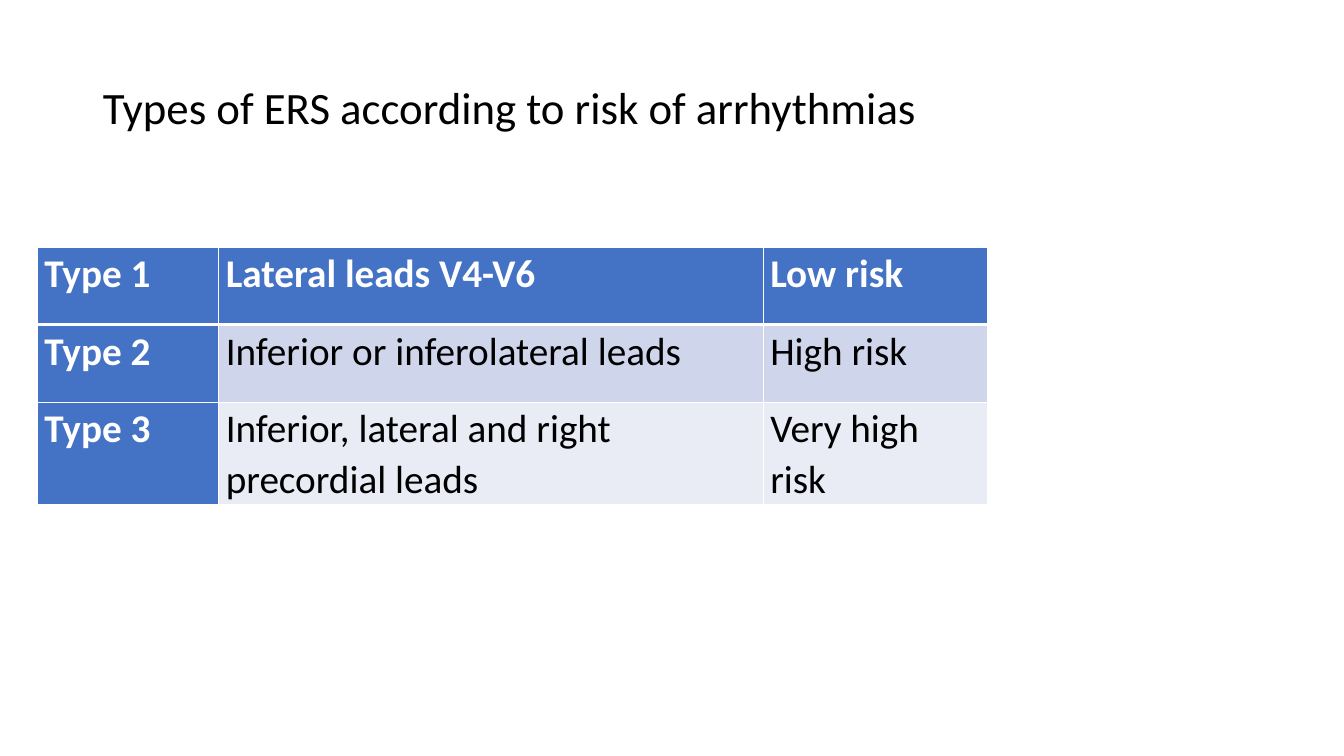
import pptx
import pptx.util
import pptx.dml.color
import pptx.enum.text
import pptx.oxml
import pptx.oxml.ns

THEME = {
    "font": "Calibri", "title_size": 32, "cell_size": 28,
    "text": "000000", "light": "FFFFFF", "accent": "4472C4",
    "bands": ["CFD5EA", "E9EBF5"],
}
Inches = pptx.util.Inches
Pt = pptx.util.Pt


def set_text(p, text, size, color, bold, spacing):
    r = p.add_run()
    r.text = text
    font = {"name": THEME["font"], "size": Pt(size), "bold": bold}
    for name, value in font.items():
        setattr(r.font, name, value)
    r.font.color.rgb = pptx.dml.color.RGBColor.from_string(color)
    p.line_spacing = spacing
    p.alignment = pptx.enum.text.PP_ALIGN.LEFT


def set_borders(cell, widths):
    tcPr = cell._tc.get_or_add_tcPr()
    for i, (side, width) in enumerate(widths.items()):
        ln = pptx.oxml.parse_xml(
            f'<a:{side} {pptx.oxml.ns.nsdecls("a")} w="{Pt(width)}"><a:solidFill>'
            f'<a:srgbClr val="{THEME["light"]}"/></a:solidFill></a:{side}>')
        tcPr.insert(i, ln)


prs = pptx.Presentation()
prs.slide_width = Inches(13.33)
prs.slide_height = Inches(7.5)
s = prs.slides.add_slide(prs.slide_layouts[5])

title = s.shapes.title
box = {"left": 0.92, "top": 0.37, "width": 11.5, "height": 1.45}
for name, value in box.items():
    setattr(title, name, Inches(value))
tf = title.text_frame
tf.vertical_anchor = pptx.enum.text.MSO_ANCHOR.MIDDLE
set_text(tf.paragraphs[0], "Types of ERS according to risk of arrhythmias",
         THEME["title_size"], THEME["text"], False, 0.9)

risks = [
    ["Type 1", "Lateral leads V4-V6", "Low risk"],
    ["Type 2", "Inferior or inferolateral leads", "High risk"],
    ["Type 3", "Inferior, lateral and right precordial leads", "Very high risk"],
]
col_widths = [1.8, 5.4, 2.23]
row_height = 0.77
table = s.shapes.add_table(
    len(risks), len(col_widths), Inches(0.37), Inches(2.45),
    Inches(sum(col_widths)), Inches(row_height * len(risks))).table
table.first_col = True
for col, width in zip(table.columns, col_widths):
    col.width = Inches(width)

margins = {"margin_left": 0.07, "margin_right": 0.07, "margin_top": 0, "margin_bottom": 0}
for i, row in enumerate(risks):
    table.rows[i].height = Inches(row_height)
    for j, text in enumerate(row):
        cell = table.cell(i, j)
        header = i == 0 or j == 0
        for name, value in margins.items():
            setattr(cell, name, Inches(value))
        fill = THEME["accent"] if header else THEME["bands"][i - 1]
        cell.fill.solid()
        cell.fill.fore_color.rgb = pptx.dml.color.RGBColor.from_string(fill)
        p = cell.text_frame.paragraphs[0]
        set_text(p, text, THEME["cell_size"],
                 THEME["light"] if header else THEME["text"], header, 1.07)
        p.space_after = Pt(8)
        set_borders(cell, {"lnL": 1, "lnR": 1, "lnT": 3 if i == 1 else 1,
                           "lnB": 3 if i == 0 else 1})

prs.save("out.pptx")
